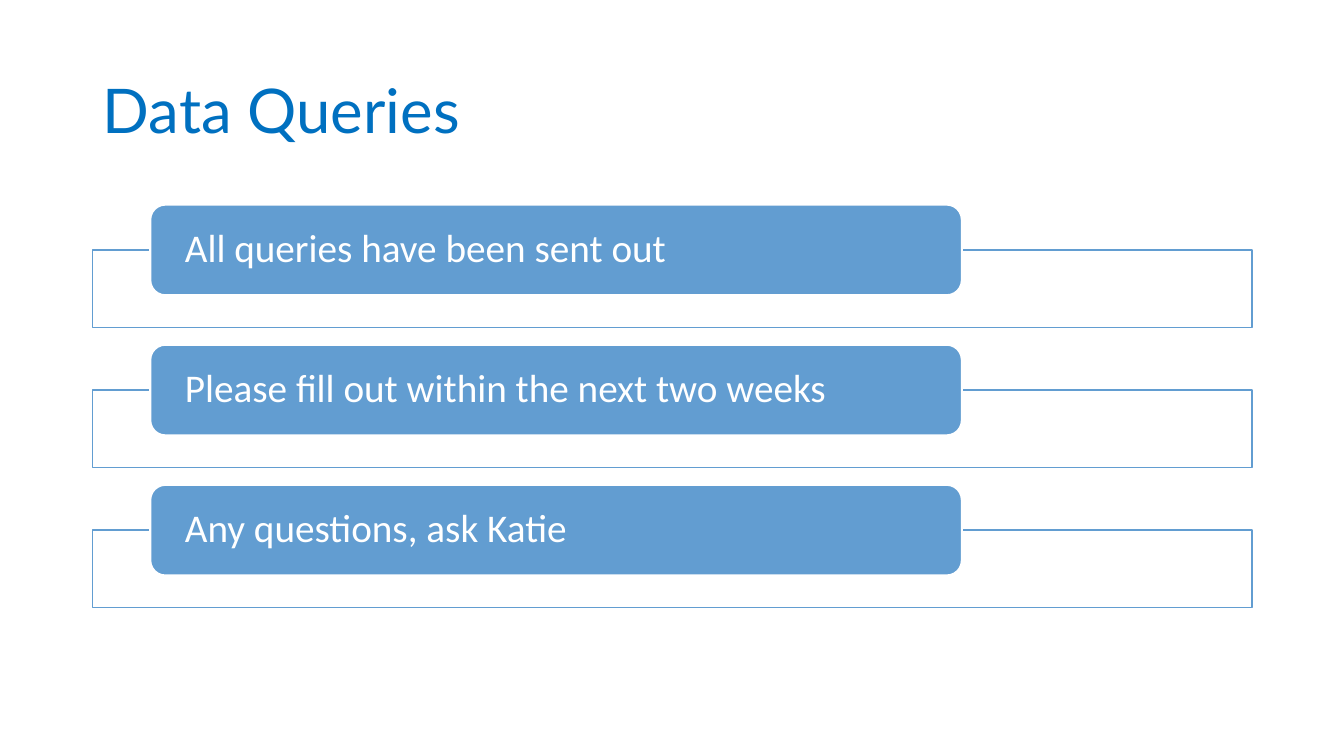
from lxml import etree
from pptx import Presentation
from pptx.dml.color import RGBColor
from pptx.enum.shapes import MSO_SHAPE
from pptx.enum.text import MSO_ANCHOR, MSO_AUTO_SIZE, PP_ALIGN
from pptx.oxml.ns import qn
from pptx.util import Inches, Pt

RECTANGLE = MSO_SHAPE.RECTANGLE
ROUNDED = MSO_SHAPE.ROUNDED_RECTANGLE
MIDDLE = MSO_ANCHOR.MIDDLE
LEFT = PP_ALIGN.LEFT
NO_AUTOFIT = MSO_AUTO_SIZE.NONE

COLORS = {"title": "0070C0", "accent": "629DD1", "white": "FFFFFF"}
TITLE_ONLY_LAYOUT = 5

MESSAGES = [
    "All queries have been sent out",
    "Please fill out within the next two weeks",
    "Any questions, ask Katie",
]
FIRST_TOP = 2.03
ROW_STEP = 1.39
FRAME_OFFSET = 0.45


def color(name):
    return RGBColor.from_string(COLORS[name])


def write_text(shape, text, *, font, size, color_name, inset, inset_y):
    """Put one left-aligned, vertically centred paragraph in a shape."""
    frame = shape.text_frame
    frame.word_wrap = True
    frame.auto_size = NO_AUTOFIT
    frame.vertical_anchor = MIDDLE
    frame.margin_left = frame.margin_right = Inches(inset)
    frame.margin_top = frame.margin_bottom = Inches(inset_y)
    paragraph = frame.paragraphs[0]
    paragraph.alignment = LEFT
    paragraph.line_spacing = 0.9
    run = paragraph.add_run()
    run.text = text
    run.font.name = font
    run.font.size = Pt(size)
    run.font.color.rgb = color(color_name)


def add_box(slide, kind, left, top, width, height, *, fill, line, line_width,
            opacity=100):
    shape = slide.shapes.add_shape(
        kind, Inches(left), Inches(top), Inches(width), Inches(height))
    shape.shadow.inherit = False
    shape.fill.solid()
    shape.fill.fore_color.rgb = color(fill)
    shape.line.color.rgb = color(line)
    shape.line.width = Pt(line_width)
    if opacity < 100:
        fill_color = shape.fill._xPr.find(qn("a:solidFill"))[0]
        alpha = etree.SubElement(fill_color, qn("a:alpha"))
        alpha.set("val", str(opacity * 1000))
    return shape


def add_title(slide, text):
    title = slide.shapes.title
    title.left, title.top = Inches(0.92), Inches(0.4)
    title.width, title.height = Inches(11.5), Inches(1.45)
    write_text(title, text, font="Lato", size=44, color_name="title",
               inset=0.1, inset_y=0.05)


def add_message(slide, text, top):
    """Add an outlined frame with a filled label over its top edge."""
    add_box(slide, RECTANGLE, 0.92, top + FRAME_OFFSET, 11.5, 0.77,
            fill="white", line="accent", line_width=1, opacity=90)
    label = add_box(slide, ROUNDED, 1.49, top, 8.05, 0.9,
                    fill="accent", line="white", line_width=1.5)
    # The rounded corners add about 0.04 inches to the inset
    write_text(label, text, font="Calibri", size=28, color_name="white",
               inset=0.3, inset_y=0)


def main():
    presentation = Presentation()
    presentation.slide_width = Inches(13.33)
    presentation.slide_height = Inches(7.5)
    layout = presentation.slide_layouts[TITLE_ONLY_LAYOUT]
    slide = presentation.slides.add_slide(layout)

    # Heading
    add_title(slide, "Data Queries")

    # Framed messages
    for row, message in enumerate(MESSAGES):
        add_message(slide, message, FIRST_TOP + row * ROW_STEP)

    presentation.save("out.pptx")


if __name__ == "__main__":
    main()
